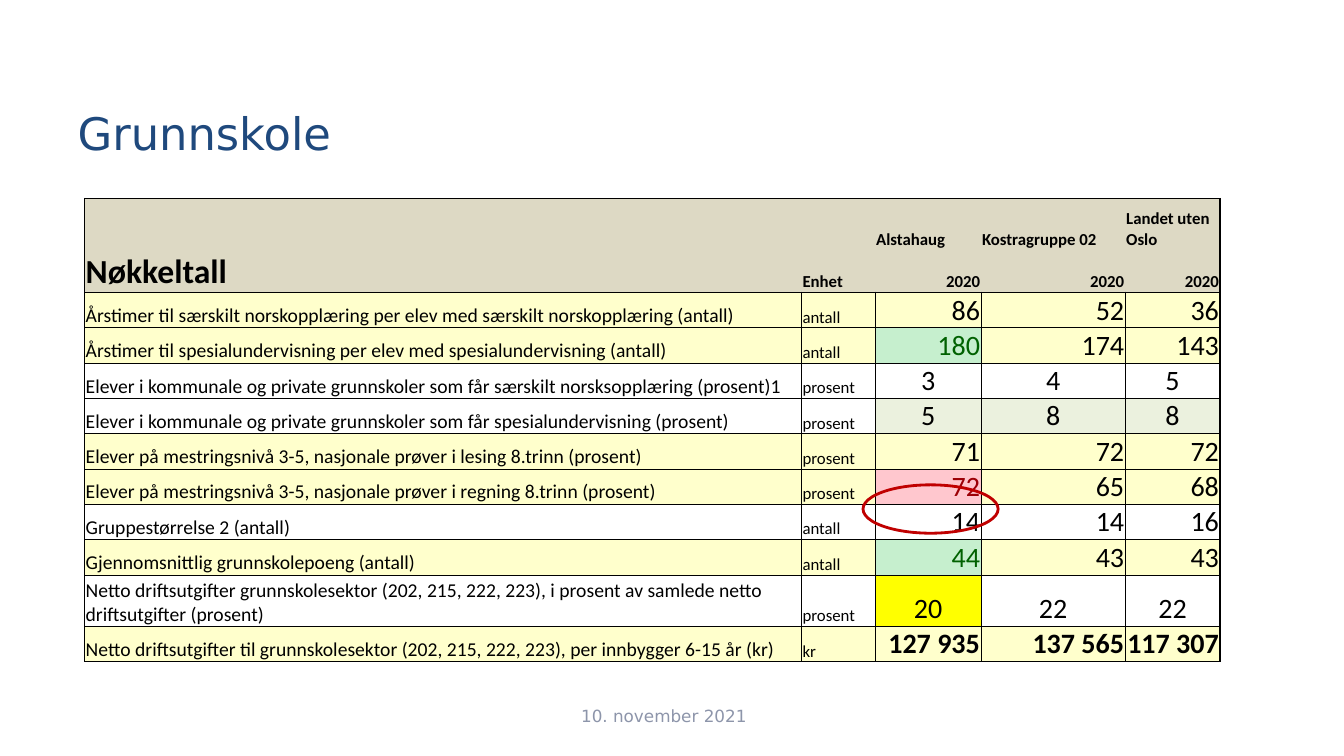
from lxml.etree import SubElement
from pptx import Presentation
from pptx.dml.color import RGBColor
from pptx.enum.shapes import MSO_SHAPE
from pptx.enum.text import MSO_ANCHOR, PP_ALIGN
from pptx.oxml.ns import qn
from pptx.util import Pt

PX = 9144  # 100 px to the inch

BLACK = RGBColor(0x00, 0x00, 0x00)
NAVY = RGBColor(0x1F, 0x49, 0x7D)
GRAY = RGBColor(0x8D, 0x95, 0xAA)
RED = RGBColor(0xC0, 0x00, 0x00)
TAN = RGBColor(0xDD, 0xD9, 0xC4)
CREAM = RGBColor(0xFF, 0xFF, 0xCC)
SAGE = RGBColor(0xEB, 0xF1, 0xDE)
YELLOW = RGBColor(0xFF, 0xFF, 0x00)
MINT = RGBColor(0xC6, 0xEF, 0xCE)
GREEN = RGBColor(0x00, 0x61, 0x00)
PINK = RGBColor(0xFF, 0xC7, 0xCE)
WINE = RGBColor(0x9C, 0x00, 0x06)

LEFT, MID, RIGHT = PP_ALIGN.LEFT, PP_ALIGN.CENTER, PP_ALIGN.RIGHT
COLS = [711, 73, 105, 143, 94]
ROWS = [51, 42] + [35] * 8 + [51, 35]
HEADS = ["Nøkkeltall", "Enhet", "Alstahaug", "Kostragruppe 02", "Landet uten Oslo"]

# Label, unit, values, row fill, fill of the value cells, alignment of the values
DATA = [
    ("Årstimer til særskilt norskopplæring per elev med særskilt norskopplæring (antall)",
     "antall", ["86", "52", "36"], CREAM, [CREAM] * 3, RIGHT),
    ("Årstimer til spesialundervisning per elev med spesialundervisning (antall)",
     "antall", ["180", "174", "143"], CREAM, [MINT, CREAM, CREAM], RIGHT),
    ("Elever i kommunale og private grunnskoler som får særskilt norsksopplæring (prosent)1",
     "prosent", ["3", "4", "5"], None, [None] * 3, MID),
    ("Elever i kommunale og private grunnskoler som får spesialundervisning (prosent)",
     "prosent", ["5", "8", "8"], None, [SAGE] * 3, MID),
    ("Elever på mestringsnivå 3-5, nasjonale prøver i lesing 8.trinn (prosent)",
     "prosent", ["71", "72", "72"], CREAM, [CREAM] * 3, RIGHT),
    ("Elever på mestringsnivå 3-5, nasjonale prøver i regning 8.trinn (prosent)",
     "prosent", ["72", "65", "68"], CREAM, [PINK, CREAM, CREAM], RIGHT),
    ("Gruppestørrelse 2 (antall)",
     "antall", ["14", "14", "16"], None, [None] * 3, RIGHT),
    ("Gjennomsnittlig grunnskolepoeng (antall)",
     "antall", ["44", "43", "43"], CREAM, [MINT, CREAM, CREAM], RIGHT),
    ("Netto driftsutgifter grunnskolesektor (202, 215, 222, 223), "
     "i prosent av samlede netto driftsutgifter (prosent)",
     "prosent", ["20", "22", "22"], None, [YELLOW, None, None], MID),
    ("Netto driftsutgifter til grunnskolesektor (202, 215, 222, 223), per innbygger 6-15 år (kr)",
     "kr", ["127 935", "137 565", "117 307"], CREAM, [CREAM] * 3, RIGHT),
]


def box(x, y, w, h):
    return [n * PX for n in (x, y, w, h)]


def write(frame, text, size, color, align=LEFT, face="Calibri", bold=False):
    frame.text = text
    para = frame.paragraphs[0]
    para.alignment = align
    for run in para.runs:
        font = run.font
        font.name, font.size, font.bold = face, Pt(size), bold
        font.color.rgb = color


def add_edges(cell, widths):
    """Draw left, right, top and bottom edges; a width of 0 means no line."""
    props = cell._tc.get_or_add_tcPr()
    for tag, width in zip(("a:lnL", "a:lnR", "a:lnT", "a:lnB"), widths):
        line = SubElement(props, qn(tag), w=str(Pt(width)))
        if width:
            fill = SubElement(line, qn("a:solidFill"))
            SubElement(fill, qn("a:srgbClr"), val=str(BLACK))
        else:
            SubElement(line, qn("a:noFill"))


def edge_widths(row, col):
    head = row < 2
    inner = 0 if head else 0.5
    left = 1 if col == 0 else inner
    right = 1 if col == len(COLS) - 1 else inner
    top = 1 if row in (0, 2) else inner
    last = row in (1, len(ROWS) - 1) or (row == 0 and col < 2)
    return left, right, top, 1 if last else inner


def style(cell, row, col, fill):
    cell.vertical_anchor = MSO_ANCHOR.BOTTOM
    cell.margin_left = cell.margin_right = cell.margin_top = PX
    cell.margin_bottom = 0
    add_edges(cell, edge_widths(row, col))
    if fill is None:
        cell.fill.background()
    else:
        cell.fill.solid()
        cell.fill.fore_color.rgb = fill


def add_title(slide, text):
    title = slide.shapes.title
    title.left, title.top, title.width, title.height = box(67, 69, 1009, 125)
    title.text_frame.vertical_anchor = MSO_ANCHOR.MIDDLE
    write(title.text_frame, text, 32, NAVY, face="DejaVu Sans")


def add_grid(slide):
    area = box(84, 197, sum(COLS), sum(ROWS))
    table = slide.shapes.add_table(len(ROWS), len(COLS), *area).table
    table.first_row = table.horz_banding = False
    for col, width in zip(table.columns, COLS):
        col.width = width * PX
    for row, height in zip(table.rows, ROWS):
        row.height = height * PX

    # Header of two rows
    for col, head in enumerate(HEADS):
        for row in (0, 1):
            style(table.cell(row, col), row, col, TAN)
        top, low = table.cell(0, col), table.cell(1, col)
        write(top.text_frame, head, 12 if col else 24, BLACK, bold=True)
        if col < 2:
            top.merge(low)
        else:
            write(low.text_frame, "2020", 12, BLACK, RIGHT, bold=True)

    # Key figures
    inks = {MINT: GREEN, PINK: WINE}
    for row, (label, unit, values, base, fills, align) in enumerate(DATA, 2):
        bold = row == len(ROWS) - 1
        parts = [(label, 14, base, LEFT, False), (unit, 12, base, LEFT, False)]
        parts += [(val, 20, fill, align, bold) for val, fill in zip(values, fills)]
        for col, (text, size, fill, side, heavy) in enumerate(parts):
            cell = table.cell(row, col)
            style(cell, row, col, fill)
            write(cell.text_frame, text, size, inks.get(fill, BLACK), side, bold=heavy)


def add_date(slide, text):
    frame = slide.shapes.add_textbox(*box(503, 690, 311, 40)).text_frame
    frame.word_wrap = True
    frame.vertical_anchor = MSO_ANCHOR.MIDDLE
    write(frame, text, 12, GRAY, MID, "DejaVu Sans")


def add_ring(slide):
    ring = slide.shapes.add_shape(MSO_SHAPE.OVAL, *box(856, 481, 134, 48))
    ring.shadow.inherit = False
    ring.fill.background()
    ring.line.color.rgb = RED
    ring.line.width = Pt(2)


def main():
    deck = Presentation()
    deck.slide_width, deck.slide_height = 1333 * PX, 750 * PX
    slide = deck.slides.add_slide(deck.slide_layouts[5])
    add_title(slide, "Grunnskole")
    add_grid(slide)
    add_date(slide, "10. november 2021")
    add_ring(slide)
    deck.save("out.pptx")


if __name__ == "__main__":
    main()
